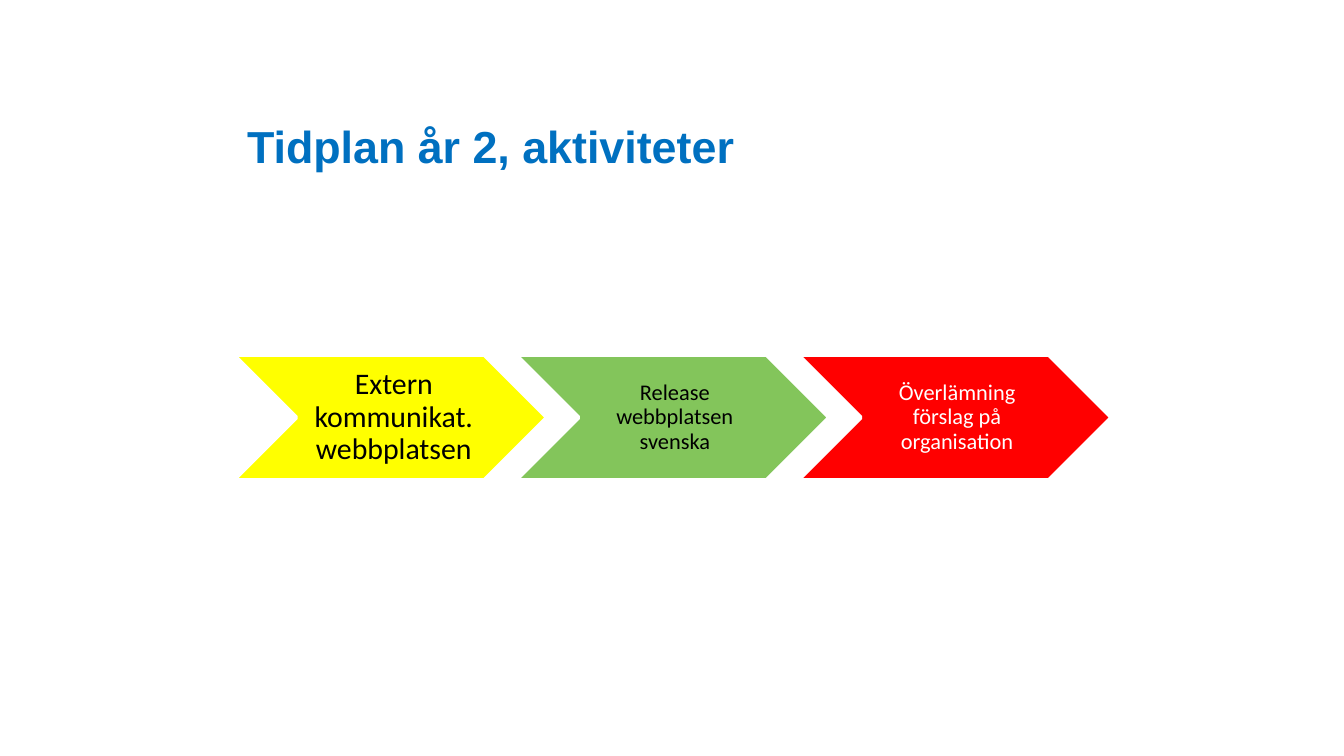
from dataclasses import dataclass

from pptx import Presentation
from pptx.dml.color import RGBColor
from pptx.enum import shapes, text
from pptx.util import Pt


@dataclass(frozen=True)
class Theme:
    """Colours, fonts and type sizes of the slide."""
    blue: str = "0070C0"
    yellow: str = "FFFF00"
    green: str = "83C55B"
    red: str = "FF0000"
    black: str = "000000"
    white: str = "FFFFFF"
    heading_font: str = "Arial"
    body_font: str = "Calibri"
    heading_size: int = 24
    large_size: int = 16
    small_size: int = 12


THEME = Theme()
ACTIVITIES = [
    ("Extern kommunikat. webbplatsen", THEME.yellow, THEME.black, THEME.large_size),
    ("Release webbplatsen svenska", THEME.green, THEME.black, THEME.small_size),
    ("Överlämning förslag på organisation", THEME.red, THEME.white, THEME.small_size),
]
LEFT = 125.3
ACTIVITY_TOP, ACTIVITY_WIDTH, ACTIVITY_HEIGHT = 190.2, 167.6, 67
ACTIVITY_PITCH = 151.2


def write(frame, wording, font_name, size, colour, bold=False):
    """Put one formatted paragraph in a text frame and return it."""
    frame.word_wrap = True
    frame.text = wording
    paragraph = frame.paragraphs[0]
    font = paragraph.runs[0].font
    font.name, font.size, font.bold = font_name, Pt(size), bold
    font.color.rgb = RGBColor.from_string(colour)
    return paragraph


def add_heading(slide, wording):
    """Add the slide heading, resting on the bottom of its box."""
    heading = slide.shapes.add_textbox(Pt(LEFT), Pt(30.2), Pt(471), Pt(65.5))
    heading.text_frame.vertical_anchor = text.MSO_ANCHOR.BOTTOM
    write(heading.text_frame, wording, THEME.heading_font,
          THEME.heading_size, THEME.blue, bold=True)


def add_activity(slide, left, wording, fill, ink, size):
    """Add one chevron of the timeline with its label."""
    activity = slide.shapes.add_shape(
        shapes.MSO_SHAPE.CHEVRON, Pt(left), Pt(ACTIVITY_TOP),
        Pt(ACTIVITY_WIDTH), Pt(ACTIVITY_HEIGHT))
    activity.shadow.inherit = False
    activity.fill.solid()
    activity.fill.fore_color.rgb = RGBColor.from_string(fill)
    activity.line.color.rgb = RGBColor.from_string(THEME.white)
    activity.line.width = Pt(2)
    frame = activity.text_frame
    frame.vertical_anchor = text.MSO_ANCHOR.MIDDLE
    frame.margin_left = Pt(size / 3)
    frame.margin_right = frame.margin_top = frame.margin_bottom = Pt(1.5)
    label = write(frame, wording, THEME.body_font, size, ink)
    label.alignment = text.PP_ALIGN.CENTER
    label.line_spacing = 0.9


def main():
    """Build the timeline slide and save it."""
    deck = Presentation()
    deck.slide_width, deck.slide_height = Pt(720), Pt(405)
    slide = deck.slides.add_slide(deck.slide_layouts[6])
    add_heading(slide, "Tidplan år 2, aktiviteter")
    for position, activity in enumerate(ACTIVITIES):
        add_activity(slide, LEFT + position * ACTIVITY_PITCH, *activity)
    deck.save("out.pptx")


if __name__ == "__main__":
    main()
